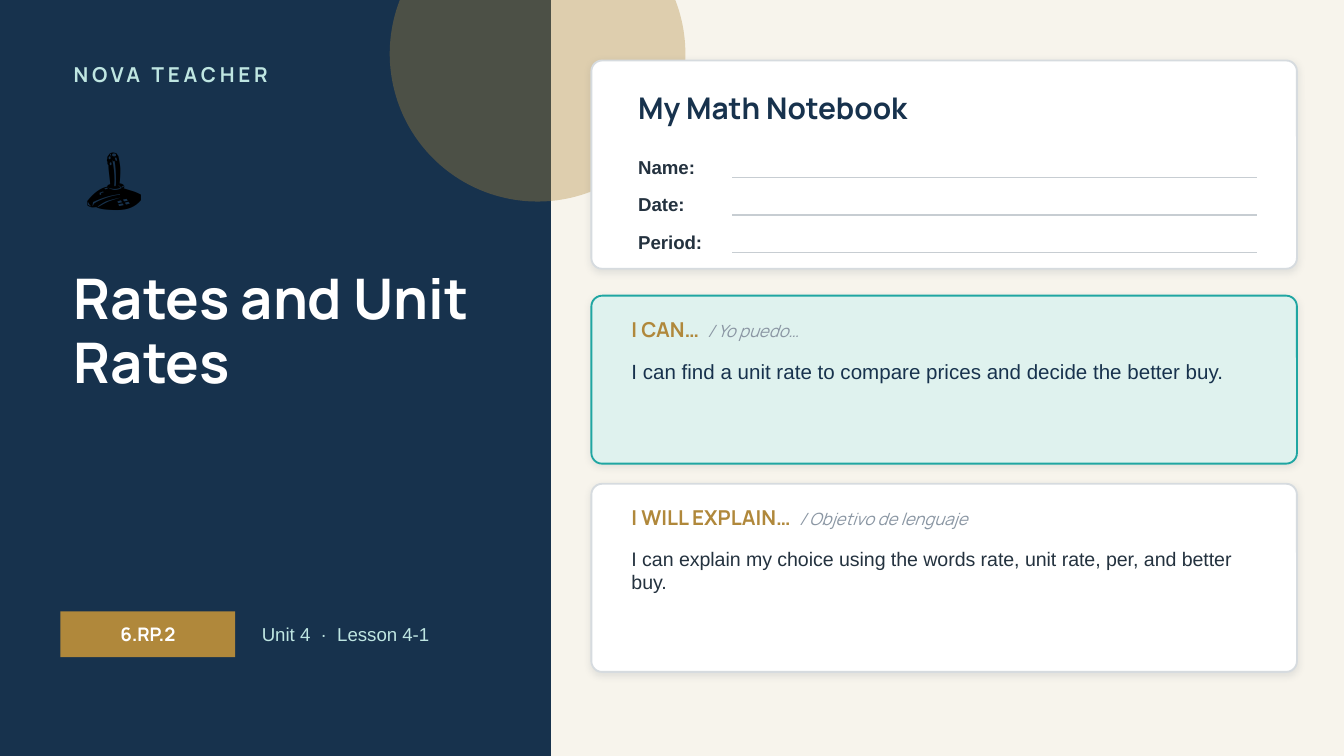
from lxml.etree import SubElement
from pptx import Presentation
from pptx.dml.color import RGBColor
from pptx.enum.shapes import MSO_CONNECTOR, MSO_SHAPE
from pptx.enum.text import MSO_ANCHOR, MSO_AUTO_SIZE, PP_ALIGN
from pptx.oxml.ns import qn
from pptx.util import Pt

PX = 4572  # EMU per px, 200 px to the inch
COLORS = {
    "navy": "17324D", "cream": "F7F4EC", "gold": "B0883B", "mint": "BFE6E2",
    "white": "FFFFFF", "black": "000000", "ink": "24323F", "gray": "8A96A3",
    "border": "D6DBDF", "rule": "C7CDD2", "teal": "1FA6A2", "pale": "DFF2EE",
    "shadow": "1C2E42",
}
HEAD, BODY, ICON = "Manrope", "Arial", "Calibri"

# Content
TITLE = "Rates and Unit Rates"
BRAND = "NOVA TEACHER"
SYMBOL = "🕹️"
STANDARD = "6.RP.2"
LESSON = "Unit 4  ·  Lesson 4-1"
NOTEBOOK = "My Math Notebook"
FIELDS = ["Name:", "Date:", "Period:"]
GOALS = [  # top, height, fill, border, heading, translation, text, size, colour
    (440, 250, "pale", "teal", "I CAN…  ", "/ Yo puedo…",
     "I can find a unit rate to compare prices and decide the better buy.", 11, "navy"),
    (720, 280, "white", "border", "I WILL EXPLAIN…  ", "/ Objetivo de lenguaje",
     "I can explain my choice using the words rate, unit rate, per, and better buy.", 10.5, "ink"),
]
CARD_X, CARD_W, RADIUS = 880, 1050, 16


def rgb(name):
    return RGBColor.from_string(COLORS[name])


def box(x, y, w, h):
    return [v * PX for v in (x, y, w, h)]


def add_run(p, text, size, font, color, bold=False, italic=False):
    r = p.add_run()
    r.text = text
    f = r.font
    f.size, f.name, f.bold, f.italic = Pt(size), font, bold, italic
    f.color.rgb = rgb(color)
    return r


def add_text(s, place, *runs, anchor=MSO_ANCHOR.MIDDLE):
    tf = s.shapes.add_textbox(*box(*place)).text_frame
    tf.word_wrap, tf.vertical_anchor = True, anchor
    return [add_run(tf.paragraphs[0], *run) for run in runs]


def add_block(s, kind, place, fill, line=None):
    sp = s.shapes.add_shape(kind, *box(*place))
    sp.shadow.inherit = False
    sp.fill.solid()
    sp.fill.fore_color.rgb = rgb(fill)
    if line:
        sp.line.color.rgb = rgb(line)
        sp.line.width = Pt(1)
    else:
        sp.line.fill.background()
    return sp


def add_color_alpha(parent, color, percent):
    SubElement(parent, qn("a:alpha"), val=str(percent * 1000))


def add_card(s, y, h, fill, line):
    sp = add_block(s, MSO_SHAPE.ROUNDED_RECTANGLE, (CARD_X, y, CARD_W, h), fill, line)
    sp.adjustments[0] = RADIUS / h
    effects = sp.element.spPr.find(qn("a:effectLst"))
    shadow = SubElement(effects, qn("a:outerShdw"), blurRad=str(Pt(4)), dist=str(Pt(1)),
                        dir="5400000", algn="bl", rotWithShape="0")
    color = SubElement(shadow, qn("a:srgbClr"), val=COLORS["shadow"])
    add_color_alpha(color, "shadow", 10)


def add_rule(s, x1, x2, y):
    line = s.shapes.add_connector(MSO_CONNECTOR.STRAIGHT, x1 * PX, y * PX, x2 * PX, y * PX)
    line.line.color.rgb = rgb("rule")
    line.line.width = Pt(0.75)
    SubElement(line.element.spPr, qn("a:effectLst"))


def main():
    prs = Presentation()
    prs.slide_width, prs.slide_height = 2000 * PX, 1125 * PX
    s = prs.slides.add_slide(prs.slide_layouts[5])
    s.background.fill.solid()
    s.background.fill.fore_color.rgb = rgb("cream")

    # Left panel and circle
    add_block(s, MSO_SHAPE.RECTANGLE, (0, 0, 820, 1125), "navy")
    circle = add_block(s, MSO_SHAPE.OVAL, (580, -140, 440, 440), "gold")
    add_color_alpha(circle.element.spPr.find(".//" + qn("a:srgbClr")), "gold", 35)
    brand, = add_text(s, (90, 80, 660, 60), (BRAND, 11, HEAD, "mint", True))
    brand.font._element.set("spc", "200")
    add_text(s, (90, 170, 300, 180), (SYMBOL, 44, ICON, "black"))

    # Title, raised above the panel
    title = s.shapes.title
    title.left, title.top, title.width, title.height = box(90, 390, 660, 340)
    title.element.getparent().append(title.element)
    tf = title.text_frame
    tf.word_wrap, tf.auto_size, tf.vertical_anchor = True, MSO_AUTO_SIZE.NONE, MSO_ANCHOR.TOP
    p = tf.paragraphs[0]
    p.alignment, p.line_spacing = PP_ALIGN.LEFT, 0.95
    add_run(p, TITLE, 30, HEAD, "white", True)

    # Standard badge and lesson
    badge = add_block(s, MSO_SHAPE.RECTANGLE, (90, 910, 260, 68), "gold")
    badge.text_frame.vertical_anchor = MSO_ANCHOR.MIDDLE
    p = badge.text_frame.paragraphs[0]
    p.alignment = PP_ALIGN.CENTER
    add_run(p, STANDARD, 10, HEAD, "white", True)
    add_text(s, (370, 910, 420, 68), (LESSON, 10, BODY, "mint"))

    # Notebook card with fill-in lines
    add_card(s, 90, 310, "white", "border")
    add_text(s, (930, 120, 960, 80), (NOTEBOOK, 16, HEAD, "navy", True))
    for i, label in enumerate(FIELDS):
        y = 224 + 56 * i
        add_text(s, (930, y, 160, 48), (label, 10, BODY, "ink", True))
        add_rule(s, 1090, 1870, y + 40)

    # Goal cards
    for y, h, fill, line, heading, translation, text, size, color in GOALS:
        add_card(s, y, h, fill, line)
        add_text(s, (920, y + 20, 970, 60), (heading, 11, HEAD, "gold", True),
                 (translation, 9, HEAD, "gray", False, True))
        add_text(s, (920, y + 84, 970, h - 95), (text, size, BODY, color),
                 anchor=MSO_ANCHOR.TOP)

    prs.save("out.pptx")


if __name__ == "__main__":
    main()
